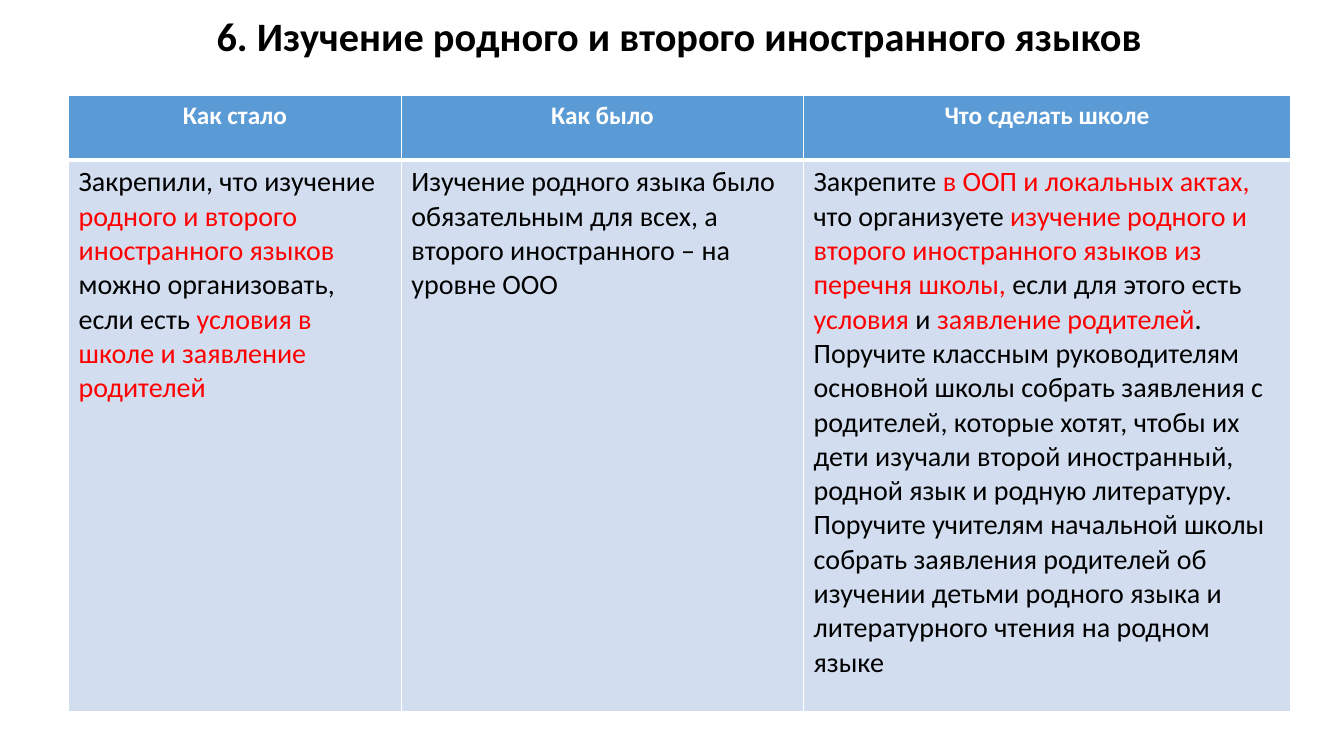
from dataclasses import dataclass
from itertools import cycle

from lxml.etree import SubElement
from pptx import Presentation
from pptx.dml.color import RGBColor
from pptx.enum.text import MSO_ANCHOR, PP_ALIGN
from pptx.oxml.ns import qn
from pptx.slide import Slide
from pptx.util import Inches, Pt

SLIDE_WIDTH, SLIDE_HEIGHT = Inches(13.33), Inches(7.5)
HEADERS = ("Как стало", "Как было", "Что сделать школе")
BODY = (
    [("Закрепили, что изучение ", "родного и второго иностранного языков ",
      "можно организовать, если есть ", "условия в школе и заявление родителей")],
    [("Изучение родного языка было обязательным для всех, а второго "
      "иностранного – на уровне ООО",)],
    [("Закрепите ", "в ООП и локальных актах, ", "что организуете ",
      "изучение родного и второго иностранного языков из перечня школы,",
      " если для этого есть ", "условия", " и ", "заявление родителей", "."),
     ("Поручите классным руководителям основной школы собрать заявления с "
      "родителей, которые хотят, чтобы их дети изучали второй иностранный, "
      "родной язык и родную литературу. Поручите учителям начальной школы "
      "собрать заявления родителей об изучении детьми родного языка и "
      "литературного чтения на родном языке",)],
)


def colour(value):
    """Turn a hex string into a colour."""
    return RGBColor.from_string(value)


def columns(count):
    """Give the width of a number of hundredths of the slide."""
    return round(SLIDE_WIDTH * count / 100)


def rows(count):
    """Give the height of a number of hundredths of the slide."""
    return round(SLIDE_HEIGHT * count / 100)


def add_text(paragraph, text, font="Calibri", size=20, ink="000000", bold=False):
    """Add a formatted run to a paragraph."""
    run = paragraph.add_run()
    run.text = text
    run.font.name = font
    run.font.size = Pt(size)
    run.font.bold = bold
    run.font.color.rgb = colour(ink)


@dataclass
class Page:
    """Hold the slide and its style, and place its elements."""

    slide: Slide
    header_fill: str = "5B9BD5"
    body_fill: str = "D2DEEF"
    light: str = "FFFFFF"
    accents: tuple = ("000000", "FF0000")

    def title(self, text, left, top, width, height):
        """Place the title near the top of its box."""
        shape = self.slide.shapes.title
        shape.left, shape.top = columns(left), rows(top)
        shape.width, shape.height = columns(width), rows(height)
        frame = shape.text_frame
        frame.word_wrap = True
        frame.vertical_anchor = MSO_ANCHOR.TOP
        frame.margin_top = rows(1.07)
        paragraph = frame.paragraphs[0]
        paragraph.alignment = PP_ALIGN.CENTER
        paragraph.line_spacing = 0.9
        add_text(paragraph, text, size=28.8, bold=True)

    def style_cell(self, cell, fill, **widths):
        """Set the borders and the fill of a cell."""
        properties = cell._tc.get_or_add_tcPr()
        for side in "LRTB":
            line = SubElement(properties, qn(f"a:ln{side}"), w=str(Pt(widths.get(side, 1))))
            solid = SubElement(line, qn("a:solidFill"))
            SubElement(solid, qn("a:srgbClr"), val=self.light)
        cell.fill.solid()
        cell.fill.fore_color.rgb = colour(fill)

    def table(self, left, top, widths, heights):
        """Add the comparison table, with every second body run accented."""
        frame = self.slide.shapes.add_table(
            len(heights), len(widths), columns(left), rows(top),
            columns(sum(widths)), rows(sum(heights)))
        table = frame.table
        for row, height in zip(table.rows, heights):
            row.height = rows(height)
        for index, (width, header, body) in enumerate(zip(widths, HEADERS, BODY)):
            table.columns[index].width = columns(width)
            header_cell, body_cell = table.cell(0, index), table.cell(1, index)
            self.style_cell(header_cell, self.header_fill, B=3)
            self.style_cell(body_cell, self.body_fill, T=3)
            heading = header_cell.text_frame.paragraphs[0]
            heading.alignment = PP_ALIGN.CENTER
            add_text(heading, header, size=18, ink=self.light, bold=True)
            for number, runs in enumerate(body):
                text_frame = body_cell.text_frame
                paragraph = text_frame.add_paragraph() if number else text_frame.paragraphs[0]
                for text, ink in zip(runs, cycle(self.accents)):
                    add_text(paragraph, text, ink=ink)


def main():
    """Build and save the slide."""
    presentation = Presentation()
    presentation.slide_width, presentation.slide_height = SLIDE_WIDTH, SLIDE_HEIGHT
    page = Page(presentation.slides.add_slide(presentation.slide_layouts[5]))
    page.title("6. Изучение родного и второго иностранного языков", 7.43, 1.07, 86.27, 13.87)
    page.table(5.1, 12.67, widths=(24.76, 29.93, 36.23), heights=(8.53, 72.93))
    presentation.save("out.pptx")


if __name__ == "__main__":
    main()
